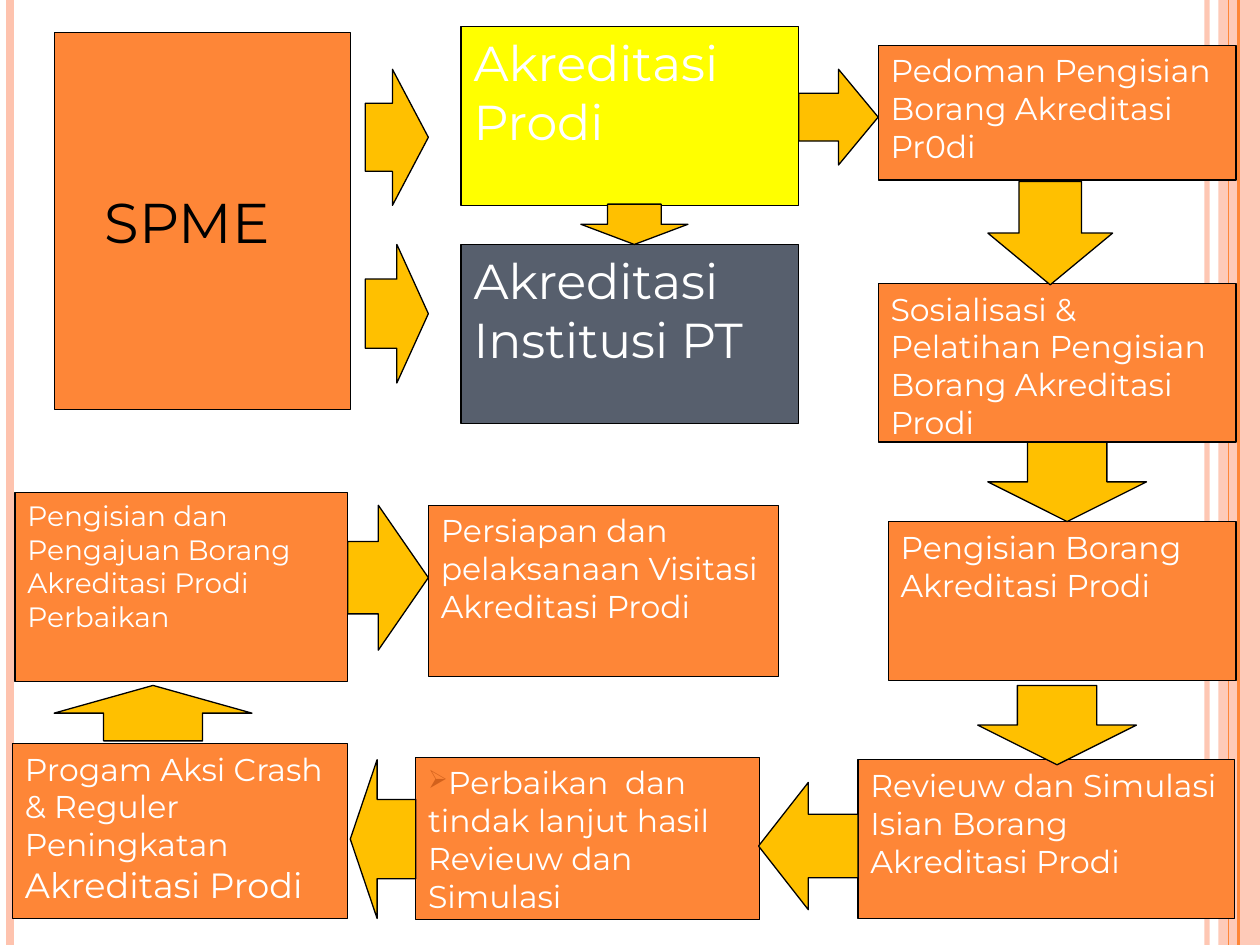
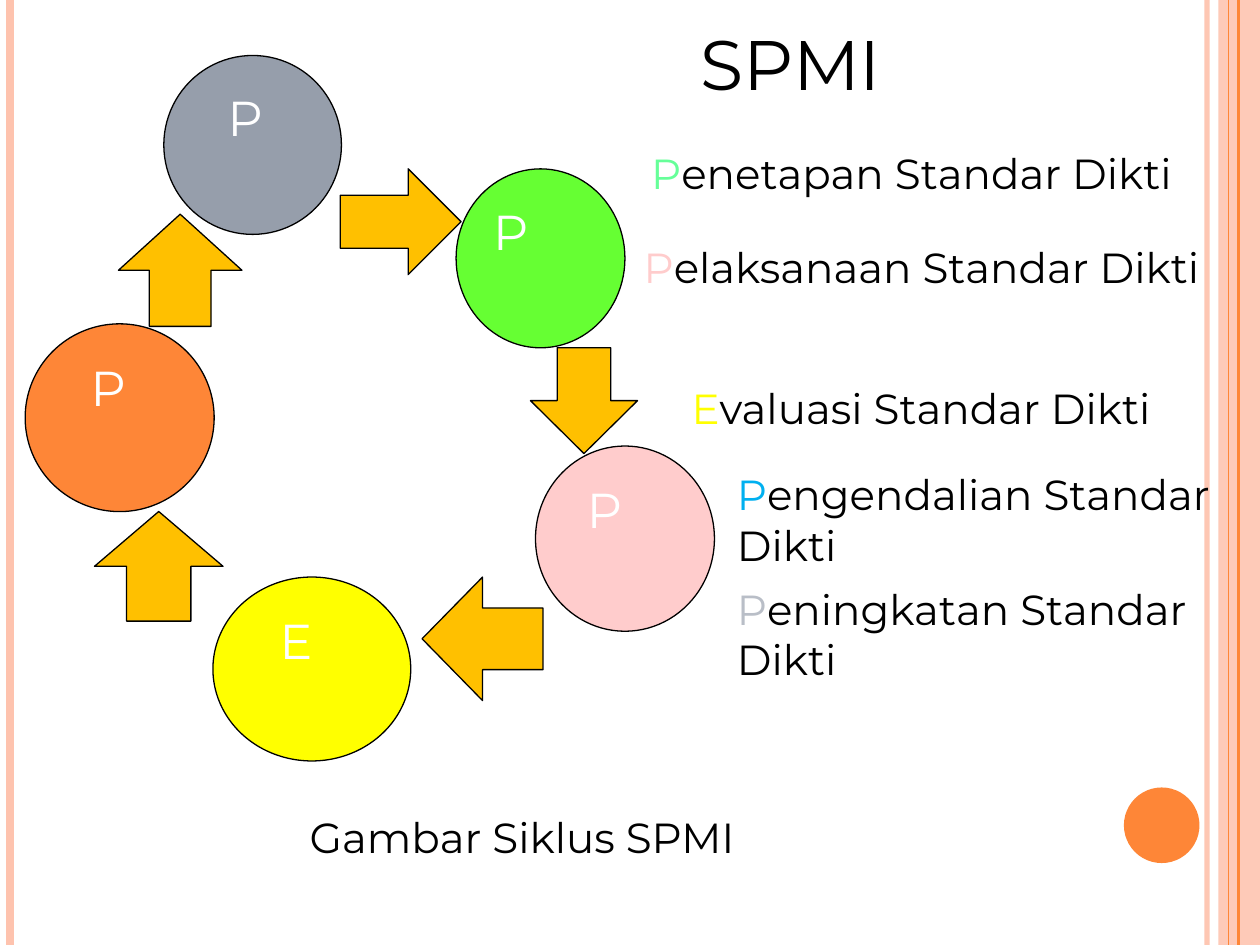
from dataclasses import dataclass

from lxml import etree
from pptx import Presentation
from pptx import util as u
from pptx.dml.color import RGBColor
from pptx.enum import shapes, text
from pptx.oxml import ns


@dataclass(frozen=True)
class Theme:
    font: str = "Montserrat"
    orange: str = "FE8637"
    peach: str = "FEC3AE"
    amber: str = "FFC000"
    yellow: str = "FFFF00"
    slate: str = "575F6D"
    grey: str = "969EAB"
    silver: str = "B9BEC7"
    green: str = "66FF33"
    mint: str = "66FF99"
    pink: str = "FFCCCC"
    blue: str = "00B0F0"
    rust: str = "D2611C"
    black: str = "000000"
    white: str = "FFFFFF"
    title: int = 40
    hub: int = 32
    heading: int = 28
    label: int = 24
    accent: int = 20
    step: int = 18
    compact: int = 16
    outline: float = 0.75


THEME = Theme()
KIND = shapes.MSO_SHAPE
RIGHT, LEFT, UP, DOWN = KIND.RIGHT_ARROW, KIND.LEFT_ARROW, KIND.UP_ARROW, KIND.DOWN_ARROW

RULES = [
    (9.58, THEME.peach, 3, 93),
    (0.08, THEME.peach, 4.5, 100),
    (9.83, THEME.orange, 1.5, 100),
    (9.75, THEME.orange, 0.75, 100),
]
BAND = (9.67, 0, 0.33, 7.5)
BADGE = (8.92, 6.25, 0.6, 0.6)

HUB = ("SPME", (0.43, 0.26, 2.35, 2.99))
ACCREDITATIONS = [
    (["Akreditasi Prodi"], (3.66, 0.21, 2.68, 1.42), THEME.yellow),
    (["Akreditasi", "Institusi PT"], (3.66, 1.94, 2.68, 1.42), THEME.slate),
]
STEPS = [
    ("Pedoman Pengisian Borang Akreditasi Pr0di", (6.97, 0.36, 2.84, 1.07), THEME.step),
    ("Sosialisasi & Pelatihan Pengisian Borang Akreditasi Prodi",
     (6.97, 2.25, 2.84, 1.26), THEME.step),
    ("Pengisian Borang Akreditasi Prodi", (7.05, 4.14, 2.76, 1.26), THEME.step),
    ("Revieuw dan Simulasi Isian Borang Akreditasi Prodi",
     (6.81, 6.03, 2.99, 1.26), THEME.step),
    ("Pengisian dan Pengajuan Borang Akreditasi Prodi Perbaikan",
     (0.12, 3.91, 2.64, 1.5), THEME.compact),
    ("Persiapan dan pelaksanaan Visitasi Akreditasi Prodi",
     (3.4, 4.01, 2.78, 1.36), THEME.step),
]
FOLLOW_UP = ("Perbaikan  dan tindak lanjut hasil Revieuw dan Simulasi",
             (3.3, 6.01, 2.73, 1.29))
ACTION = ("Progam Aksi Crash & Reguler Peningkatan ", "Akreditasi Prodi",
          (0.1, 5.9, 2.66, 1.39))
FLOW_ARROWS = [
    (RIGHT, (2.9, 0.55, 0.5, 1.08), 0.57),
    (RIGHT, (2.9, 1.94, 0.5, 1.1), 0.5),
    (RIGHT, (6.34, 0.55, 0.63, 0.76), 0.5),
    (RIGHT, (2.76, 4.01, 0.64, 1.15), 0.62),
    (DOWN, (4.61, 1.62, 0.85, 0.32), 0.5),
    (DOWN, (7.84, 1.44, 0.99, 0.82), 0.5),
    (DOWN, (7.84, 3.51, 1.26, 0.63), 0.5),
    (DOWN, (7.76, 5.44, 1.26, 0.63), 0.5),
    (LEFT, (6.02, 6.21, 0.79, 1.01), 0.5),
    (LEFT, (2.78, 6.03, 0.52, 1.26), 0.41),
    (UP, (0.43, 5.44, 1.57, 0.44), 0.5),
]

CYCLE_TITLE = ("SPMI", (4.96, 0.11, 4.45, 0.77))
CYCLE = [
    ("P", (1.3, 0.44, 1.41, 1.42), THEME.grey, 0.3),
    ("P", (3.62, 1.34, 1.34, 1.42), THEME.green, 0.1),
    ("P", (4.25, 3.54, 1.42, 1.47), THEME.pink, 0.2),
    ("E", (1.69, 4.58, 1.57, 1.46), THEME.yellow, 0.3),
    ("P", (0.2, 2.57, 1.5, 1.49), THEME.orange, 0.3),
]
CYCLE_ARROWS = [
    (RIGHT, (2.7, 1.34, 0.96, 0.84), 0.5),
    (DOWN, (4.21, 2.76, 0.85, 0.84), 0.5),
    (LEFT, (3.35, 4.58, 0.96, 0.98), 0.5),
    (UP, (0.75, 4.06, 1.02, 0.87), 0.5),
    (UP, (0.94, 1.7, 0.98, 0.89), 0.5),
]
LABELS = [
    ("P", "enetapan Standar Dikti", THEME.mint, (5.07, 1.12, 4.74, 0.51)),
    ("P", "elaksanaan Standar Dikti", THEME.pink, (5.01, 1.87, 4.93, 0.91)),
    ("E", "valuasi Standar Dikti", THEME.yellow, (5.39, 2.99, 4.41, 0.51)),
    ("P", "engendalian Standar Dikti", THEME.blue, (5.75, 3.67, 4.25, 0.91)),
    ("P", "eningkatan Standar Dikti", THEME.silver, (5.75, 4.58, 4.06, 0.91)),
]
CAPTION = ("Gambar Siklus SPMI", (2.36, 6.39, 4.84, 0.5))


def rgb(value):
    return RGBColor.from_string(value)


def inches(box):
    return [u.Inches(length) for length in box]


def set_opacity(shape, percent):
    for color in shape.element.spPr.iter(ns.qn("a:srgbClr")):
        etree.SubElement(color, ns.qn("a:alpha")).set("val", str(percent * 1000))


def write(shape, paragraphs, inset=0.1, anchor=text.MSO_ANCHOR.TOP):
    frame = shape.text_frame
    frame.word_wrap = True
    frame.auto_size = text.MSO_AUTO_SIZE.NONE
    frame.vertical_anchor = anchor
    frame.margin_left = u.Inches(inset)
    for index, runs in enumerate(paragraphs):
        paragraph = frame.add_paragraph() if index else frame.paragraphs[0]
        paragraph.alignment = text.PP_ALIGN.LEFT
        for words, size, color in runs:
            run = paragraph.add_run()
            run.text = words
            run.font.name = THEME.font
            run.font.size = u.Pt(size)
            run.font.color.rgb = rgb(color)


def add_shape(slide, kind, box, fill, outlined=True):
    shape = slide.shapes.add_shape(kind, *inches(box))
    shape.shadow.inherit = False
    shape.fill.solid()
    shape.fill.fore_color.rgb = rgb(fill)
    if outlined:
        shape.line.color.rgb = rgb(THEME.black)
        shape.line.width = u.Pt(THEME.outline)
    else:
        shape.line.fill.background()
    return shape


def add_box(slide, box, fill, paragraphs, **options):
    shape = add_shape(slide, KIND.RECTANGLE, box, fill)
    write(shape, paragraphs, **options)
    return shape


def add_arrows(slide, arrows):
    for kind, box, head in arrows:
        arrow = add_shape(slide, kind, box, THEME.amber)
        arrow.adjustments[0] = 0.5
        arrow.adjustments[1] = head


def add_label(slide, box, runs):
    write(slide.shapes.add_textbox(*inches(box)), [runs])


def add_bullet(paragraph, symbol, color):
    properties = paragraph._p.get_or_add_pPr()
    properties.set("marL", "0")
    properties.set("indent", "0")
    bullet_color = etree.SubElement(properties, ns.qn("a:buClr"))
    etree.SubElement(bullet_color, ns.qn("a:srgbClr")).set("val", color)
    etree.SubElement(properties, ns.qn("a:buSzPct")).set("val", "80000")
    etree.SubElement(properties, ns.qn("a:buChar")).set("char", symbol)


def move_to(shape, target):
    tree = target.element.cSld.spTree
    shape.element.xpath(".//p:cNvPr")[0].set("id", str(100 + len(tree)))
    tree.insert_element_before(shape.element, "p:extLst")


def decorate_master(slide, master, height):
    band = add_shape(slide, KIND.RECTANGLE, BAND, THEME.peach, outlined=False)
    set_opacity(band, 87)
    move_to(band, master)
    for left, color, width, opacity in RULES:
        x = u.Inches(left)
        rule = slide.shapes.add_connector(shapes.MSO_CONNECTOR.STRAIGHT, x, 0, x, height)
        rule.line.color.rgb = rgb(color)
        rule.line.width = u.Pt(width)
        etree.SubElement(rule.element.spPr, ns.qn("a:effectLst"))
        if opacity < 100:
            set_opacity(rule, opacity)
        move_to(rule, master)


def build_flow(slide):
    name, box = HUB
    add_box(slide, box, THEME.orange, [[(name, THEME.hub, THEME.black)]],
            inset=0.4, anchor=text.MSO_ANCHOR.MIDDLE)
    for lines, box, fill in ACCREDITATIONS:
        add_box(slide, box, fill, [[(line, THEME.heading, THEME.white)] for line in lines])
    for words, box, size in STEPS:
        add_box(slide, box, THEME.orange, [[(words, size, THEME.white)]])
    words, box = FOLLOW_UP
    follow_up = add_box(slide, box, THEME.orange, [[(words, THEME.step, THEME.white)]])
    add_bullet(follow_up.text_frame.paragraphs[0], "➢", THEME.rust)
    start, ending, box = ACTION
    add_box(slide, box, THEME.orange, [[(start, THEME.step, THEME.white),
                                        (ending, THEME.accent, THEME.white)]])
    add_arrows(slide, FLOW_ARROWS)


def build_cycle(slide):
    words, box = CYCLE_TITLE
    title = slide.shapes.title
    title.left, title.top, title.width, title.height = inches(box)
    write(title, [[(words, THEME.title, THEME.black)]], inset=0.6)
    for letter, box, fill, inset in CYCLE:
        circle = add_shape(slide, KIND.OVAL, box, fill)
        write(circle, [[(letter, THEME.heading, THEME.white)]], inset=inset)
    add_arrows(slide, CYCLE_ARROWS)
    for initial, rest, color, box in LABELS:
        add_label(slide, box, [(initial, THEME.label, color),
                               (rest, THEME.label, THEME.black)])
    words, box = CAPTION
    add_label(slide, box, [(words, THEME.label, THEME.black)])


def main():
    presentation = Presentation()
    presentation.slide_width = u.Inches(10)
    presentation.slide_height = u.Inches(7.5)
    title_layout, blank_layout = presentation.slide_layouts[5], presentation.slide_layouts[6]
    flow = presentation.slides.add_slide(blank_layout)
    cycle = presentation.slides.add_slide(title_layout)
    decorate_master(flow, presentation.slide_master, presentation.slide_height)
    badge = add_shape(cycle, KIND.OVAL, BADGE, THEME.orange, outlined=False)
    move_to(badge, title_layout)
    build_flow(flow)
    build_cycle(cycle)
    presentation.save("out.pptx")


if __name__ == "__main__":
    main()
